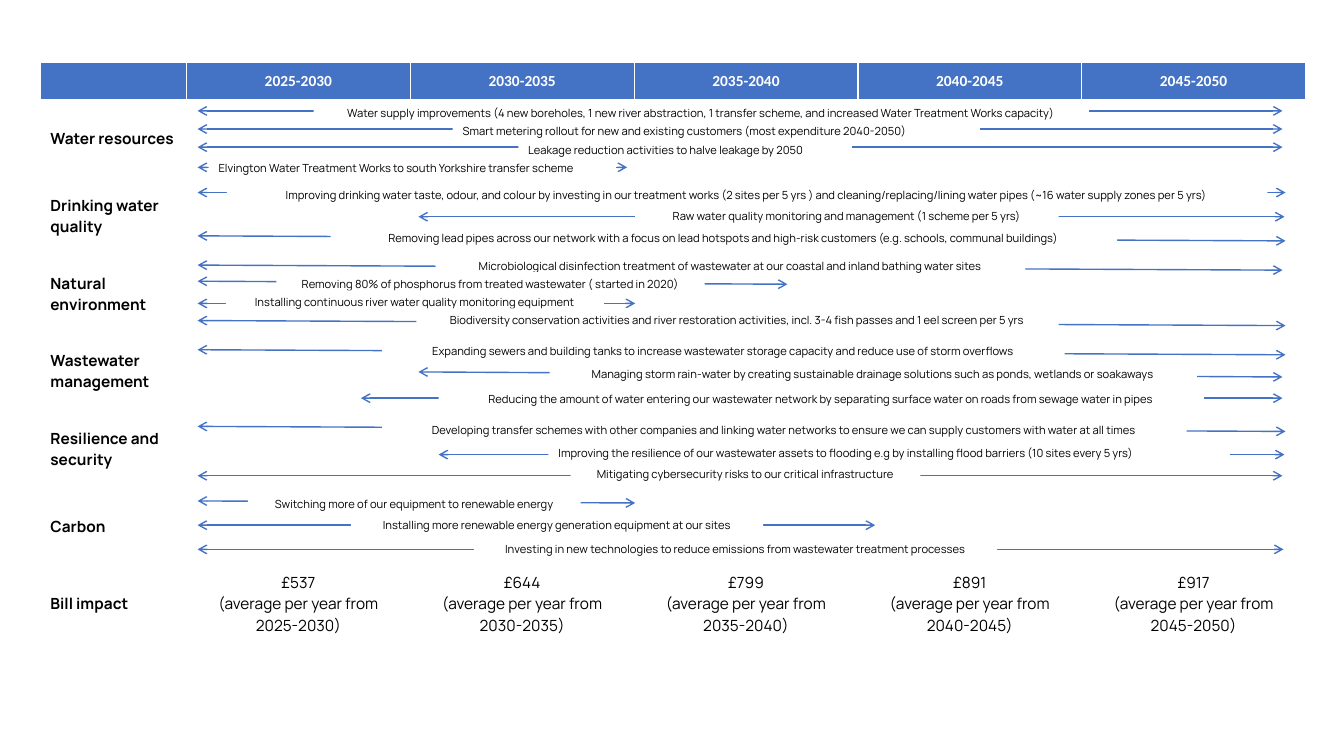
from dataclasses import dataclass

import pptx
import pptx.dml.color
import pptx.enum.shapes
import pptx.enum.text
import pptx.oxml
import pptx.oxml.ns
import pptx.util
from lxml import etree

EMU_PER_PX = 9144  # 100 px to the inch
COLOURS = {"blue": "4472C4", "white": "FFFFFF", "black": "000000"}
PERIODS = ["2025-2030", "2030-2035", "2035-2040", "2040-2045", "2045-2050"]
BILLS = ["£537", "£644", "£799", "£891", "£917"]
THEMES = ["Water resources", "Drinking water quality", "Natural environment",
          "Wastewater management", "Resilience and security", "Carbon", "Bill impact"]
LABEL_WIDTH, PERIOD_WIDTH = 145, 222
HEADER_HEIGHT, THEME_HEIGHT = 37, 77
ALIGN = pptx.enum.text.PP_ALIGN
MIDDLE = pptx.enum.text.MSO_ANCHOR.MIDDLE


@dataclass
class Activity:
    """A label lying over a two-headed arrow that runs from start to end."""
    text: str
    left: int
    top: int
    width: int
    start_y: int
    end_y: int
    start: int = 196
    end: int = 1272
    height: int = 24
    align: ALIGN = ALIGN.CENTER


ACTIVITIES = [
    Activity("Water supply improvements (4 new boreholes, 1 new river abstraction, 1 transfer scheme, "
             "and increased Water Treatment Works capacity)", 311, 101, 769, 110, 110, height=37),
    Activity("Smart metering rollout for new and existing customers (most expenditure 2040-2050)",
             449, 118, 523, 128, 128, align=ALIGN.LEFT),
    Activity("Elvington Water Treatment Works to south Yorkshire transfer scheme",
             207, 155, 404, 166, 166, end=622, align=ALIGN.LEFT),
    Activity("Leakage reduction activities to halve leakage by 2050",
             514, 137, 331, 146, 146, align=ALIGN.LEFT),
    Activity("Improving drinking water taste, odour, and colour by investing in our treatment works "
             "(2 sites per 5 yrs ) and cleaning/replacing/lining water pipes "
             "(~16 water supply zones per 5 yrs)", 225, 182, 1032, 191, 191, end=1275),
    Activity("Raw water quality monitoring and management (1 scheme per 5 yrs)",
             630, 203, 420, 215, 215, start=415, end=1274),
    Activity("Removing lead pipes across our network with a focus on lead hotspots and high-risk "
             "customers (e.g. schools, communal buildings)", 328, 225, 780, 234, 239, end=1275),
    Activity("Microbiological disinfection treatment of wastewater at our coastal and inland "
             "bathing water sites", 432, 252, 585, 263, 268),
    Activity("Removing 80% of phosphorus from treated wastewater ( started in 2020)",
             274, 270, 425, 279, 282, end=781),
    Activity("Installing continuous river water quality monitoring equipment",
             224, 288, 375, 301, 301, end=630),
    Activity("Biodiversity conservation activities and river restoration activities, "
             "incl. 3-4 fish passes and 1 eel screen per 5 yrs", 413, 306, 637, 318, 323, end=1275),
    Activity("Expanding sewers and building tanks to increase wastewater storage capacity "
             "and reduce use of storm overflows", 379, 337, 677, 347, 352, end=1275),
    Activity("Managing storm rain-water by creating sustainable drainage solutions "
             "such as ponds, wetlands or soakaways", 545, 359, 642, 369, 374, start=415),
    Activity("Reducing the amount of water entering our wastewater network by separating surface "
             "water on roads from sewage water in pipes", 435, 384, 759, 395, 395, start=358),
    Activity("Developing transfer schemes with other companies and linking water networks to ensure "
             "we can supply customers with water at all times", 379, 415, 798, 423, 428, end=1275),
    Activity("Improving the resilience of our wastewater assets to flooding e.g by installing "
             "flood barriers (10 sites every 5 yrs)", 544, 438, 676, 451, 451,
             start=435, end=1274, align=ALIGN.LEFT),
    Activity("Mitigating cybersecurity risks to our critical infrastructure",
             566, 459, 347, 472, 472),
    Activity("Switching more of our equipment to renewable energy",
             246, 488, 330, 497, 499, end=630),
    Activity("Installing more renewable energy generation equipment at our sites",
             348, 509, 409, 521, 521, end=868),
    Activity("Investing in new technologies to reduce emissions from wastewater treatment processes",
             470, 533, 519, 545, 545, end=1273),
]


def px(length: int) -> pptx.util.Emu:
    return pptx.util.Emu(length * EMU_PER_PX)


def rgb(name: str) -> pptx.dml.color.RGBColor:
    return pptx.dml.color.RGBColor.from_string(COLOURS[name])


def add_run(paragraph, text: str, size: int, align: ALIGN = ALIGN.CENTER,
            font: str = "Manrope", colour: str = "black", bold: bool = False) -> None:
    paragraph.alignment = align
    run = paragraph.add_run()
    run.text = text
    run.font.name = font
    run.font.size = pptx.util.Pt(size)
    run.font.bold = bold
    run.font.color.rgb = rgb(colour)


def add_plan_table(slide) -> None:
    frame = slide.shapes.add_table(
        len(THEMES) + 1, len(PERIODS) + 1, px(40), px(62),
        px(LABEL_WIDTH + PERIOD_WIDTH * len(PERIODS)),
        px(HEADER_HEIGHT + THEME_HEIGHT * len(THEMES)))
    table = frame.table
    table.horz_banding = False
    for index, column in enumerate(table.columns):
        column.width = px(PERIOD_WIDTH if index else LABEL_WIDTH)
    for index, row in enumerate(table.rows):
        row.height = px(THEME_HEIGHT if index else HEADER_HEIGHT)
        for cell in row.cells:
            cell.vertical_anchor = MIDDLE
            if index:
                cell.fill.background()
            else:
                cell.fill.solid()
                cell.fill.fore_color.rgb = rgb("blue")

    corner = table.cell(0, 0)
    corner.margin_top = corner.margin_bottom = 0
    for row_index, theme in enumerate(THEMES, start=1):
        label = table.cell(row_index, 0).text_frame.paragraphs[0]
        add_run(label, theme, 11, ALIGN.LEFT, bold=True)
        if row_index < len(THEMES):
            table.cell(row_index, 1).merge(table.cell(row_index, len(PERIODS)))
    for column_index, (period, bill) in enumerate(zip(PERIODS, BILLS), start=1):
        heading = table.cell(0, column_index).text_frame.paragraphs[0]
        add_run(heading, period, 11, font="Calibri", colour="white", bold=True)
        impact = table.cell(len(THEMES), column_index).text_frame
        add_run(impact.paragraphs[0], bill, 11)
        add_run(impact.add_paragraph(), f"(average per year from {period})", 11)


def add_activity(slide, activity: Activity) -> None:
    arrow = slide.shapes.add_connector(
        pptx.enum.shapes.MSO_CONNECTOR.STRAIGHT,
        px(activity.start), px(activity.start_y), px(activity.end), px(activity.end_y))
    arrow.line.color.rgb = rgb("blue")
    arrow.line.width = pptx.util.Pt(1)
    properties = arrow.element.spPr
    outline = properties.find(pptx.oxml.ns.qn("a:ln"))
    for end in ("a:headEnd", "a:tailEnd"):
        etree.SubElement(outline, pptx.oxml.ns.qn(end), type="arrow")
    etree.SubElement(properties, pptx.oxml.ns.qn("a:effectLst"))

    label = slide.shapes.add_textbox(
        px(activity.left), px(activity.top), px(activity.width), px(activity.height))
    label.fill.solid()
    label.fill.fore_color.rgb = rgb("white")
    label.text_frame.word_wrap = True
    label.text_frame.auto_size = pptx.enum.text.MSO_AUTO_SIZE.SHAPE_TO_FIT_TEXT
    add_run(label.text_frame.paragraphs[0], activity.text, 8, activity.align)


def main() -> None:
    presentation = pptx.Presentation()
    presentation.slide_width, presentation.slide_height = px(1333), px(750)
    slide = presentation.slides.add_slide(presentation.slide_layouts[6])
    add_plan_table(slide)
    for activity in ACTIVITIES:
        add_activity(slide, activity)
    presentation.save("out.pptx")


if __name__ == "__main__":
    main()
